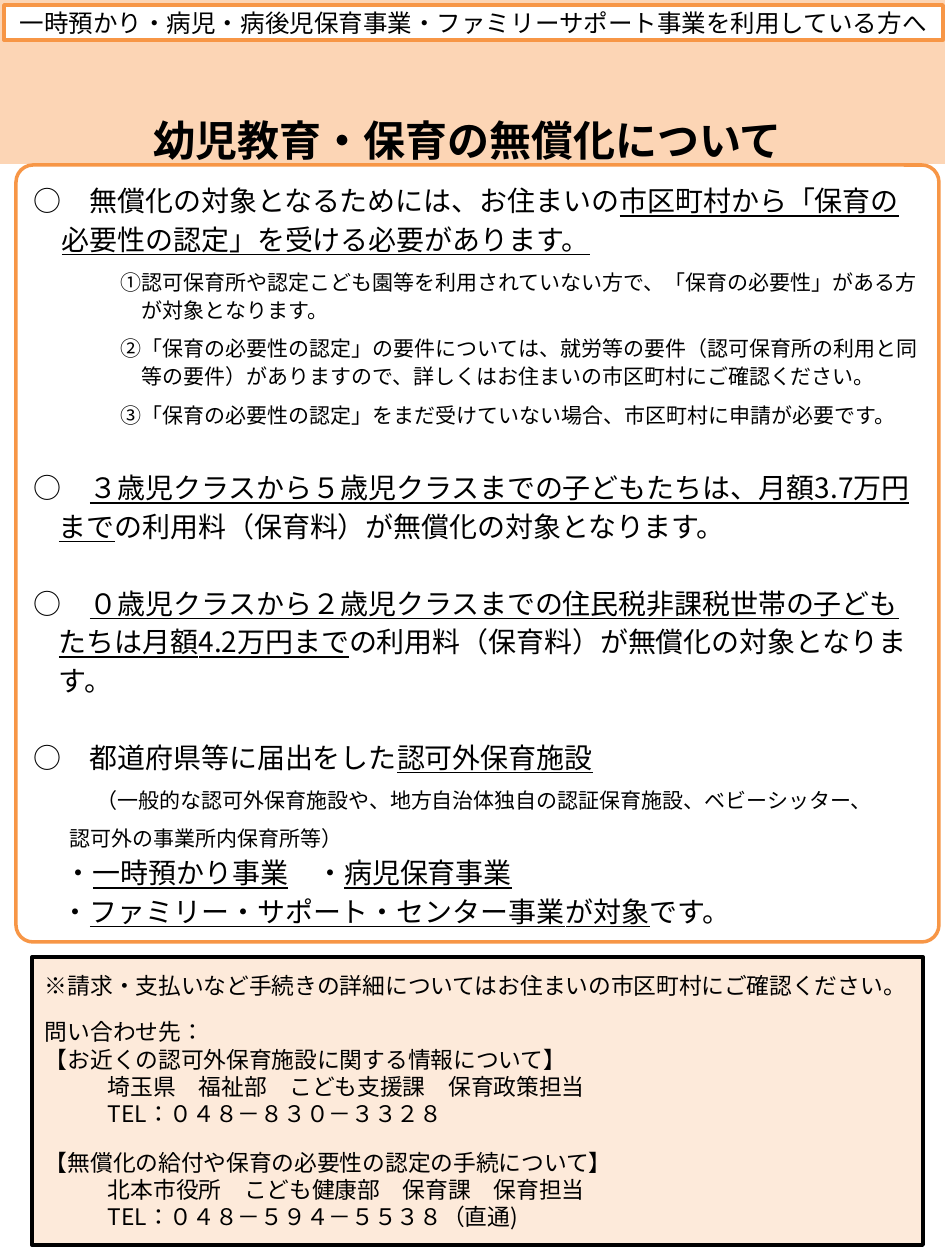
from lxml import etree
from pptx import Presentation
from pptx.dml.color import RGBColor
from pptx.enum.lang import MSO_LANGUAGE_ID
from pptx.enum.shapes import MSO_SHAPE
from pptx.enum.text import MSO_ANCHOR, MSO_AUTO_SIZE, PP_ALIGN
from pptx.oxml.ns import qn
from pptx.util import Emu, Pt

PX = 914400 // 126
FONT = "Noto Sans CJK JP"
BLACK = RGBColor(0x00, 0x00, 0x00)
WHITE = RGBColor(0xFF, 0xFF, 0xFF)
ORANGE = RGBColor(0xF7, 0x96, 0x46)
PEACH = RGBColor(0xFC, 0xD5, 0xB5)
PALE_PEACH = RGBColor(0xFD, 0xEA, 0xDA)
RECT, ROUNDED = MSO_SHAPE.RECTANGLE, MSO_SHAPE.ROUNDED_RECTANGLE
LEFT, CENTER = PP_ALIGN.LEFT, PP_ALIGN.CENTER
MIDDLE, BOTTOM = MSO_ANCHOR.MIDDLE, MSO_ANCHOR.BOTTOM
NO_AUTOFIT = MSO_AUTO_SIZE.NONE
JAPANESE = MSO_LANGUAGE_ID.JAPANESE

# Indents in px (margin, first line), sizes and spacing in points
ITEM = dict(size=16, margin=25, indent=-25, line=22)
NOTE = dict(size=12, margin=108, indent=-21, line=16, before=6, level=1)
CONTACT = dict(size=13, line=15.6)
DETAIL = dict(CONTACT, margin=63, level=1)

# Text between underscores is underlined
REQUIREMENTS = [
    ("○　無償化の対象となるためには、お住まいの_市区町村から「保育の_", ITEM),
    ("_必要性の認定」を受ける必要があります。_", dict(ITEM, margin=28, indent=0)),
    ("①認可保育所や認定こども園等を利用されていない方で、「保育の必要性」がある方が対象となります。", NOTE),
    ("②「保育の必要性の認定」の要件については、就労等の要件（認可保育所の利用と同等の要件）が"
     "ありますので、詳しくはお住まいの市区町村にご確認ください。", NOTE),
    ("③「保育の必要性の認定」をまだ受けていない場合、市区町村に申請が必要です。", NOTE),
    ("○　_３歳児クラスから５歳児クラスまでの子どもたちは、月額3.7万円まで_"
     "の利用料（保育料）が無償化の対象となります。", dict(ITEM, before=22)),
    ("○　_０歳児クラスから２歳児クラスまでの住民税非課税世帯の子どもたちは月額4.2万円まで_"
     "の利用料（保育料）が無償化の対象となります。", dict(ITEM, before=22)),
    ("○　都道府県等に届出をした_認可外保育施設_", dict(ITEM, before=22)),
    ("（一般的な認可外保育施設や、地方自治体独自の認証保育施設、ベビーシッター、",
     dict(ITEM, size=12, margin=63, indent=0)),
    ("認可外の事業所内保育所等）", dict(ITEM, size=12, margin=36, indent=0)),
    ("・_一時預かり事業_　・_病児保育事業_", dict(ITEM, margin=31, indent=0)),
    ("・_ファミリー・サポート・センター事業_\t_が対象_です。",
     dict(ITEM, margin=28, indent=0, tab=586)),
]
CONTACTS = [
    ("※請求・支払いなど手続きの詳細についてはお住まいの市区町村にご確認ください。", CONTACT),
    ("問い合わせ先：", dict(CONTACT, before=11)),
    ("【お近くの認可外保育施設に関する情報について】", CONTACT),
    ("埼玉県　福祉部　こども支援課　保育政策担当", DETAIL),
    ("TEL：０４８－８３０－３３２８", DETAIL),
    ("【無償化の給付や保育の必要性の認定の手続について】", dict(CONTACT, before=12)),
    ("北本市役所　こども健康部　保育課　保育担当", DETAIL),
    ("TEL：０４８－５９４－５５３８（直通)", DETAIL),
]


def apply(target, values):
    for name, value in values.items():
        setattr(target, name, value)


def place(shape, left, top, width, height):
    apply(shape, dict(left=Emu(left * PX), top=Emu(top * PX),
                      width=Emu(width * PX), height=Emu(height * PX)))


def add_panel(slide, kind, box, fill, line=None, weight=2):
    panel = slide.shapes.add_shape(kind, *(Emu(v * PX) for v in box))
    panel.shadow.inherit = False
    panel.fill.solid()
    panel.fill.fore_color.rgb = fill
    if line is None:
        panel.line.fill.background()
    else:
        panel.line.color.rgb = line
        panel.line.width = Pt(weight)
    return panel


def send_to_back(shape):
    shape.element.getparent().insert(2, shape.element)


def format_paragraph(paragraph, align, line=None, before=0, margin=0, indent=0, level=0, tab=None):
    properties = paragraph._p.get_or_add_pPr()
    properties.set("marL", str(margin * PX))
    properties.set("indent", str(indent * PX))
    etree.SubElement(properties, qn("a:buNone"))
    if tab:
        stops = etree.SubElement(properties, qn("a:tabLst"))
        etree.SubElement(stops, qn("a:tab"), pos=str(tab * PX), algn="l")
    apply(paragraph, dict(alignment=align, level=level, space_before=Pt(before),
                          line_spacing=Pt(line) if line else 1.0))


def add_runs(paragraph, text, size, bold):
    for position, part in enumerate(text.split("_")):
        if part:
            run = paragraph.add_run()
            run.text = part
            apply(run.font, dict(size=Pt(size), name=FONT, bold=bold,
                                 underline=position % 2 == 1, language_id=JAPANESE))
            run.font.color.rgb = BLACK
            etree.SubElement(run.font._element, qn("a:ea"), typeface=FONT)


def write(shape, content, align=LEFT, anchor=MIDDLE, side=0, bold=False):
    """Fill a shape with (text, format) paragraphs; side is the inset in px."""
    frame = shape.text_frame
    apply(frame, dict(word_wrap=True, auto_size=NO_AUTOFIT, vertical_anchor=anchor,
                      margin_left=Emu(side * PX), margin_right=Emu(side * PX),
                      margin_top=0, margin_bottom=0))
    for number, (text, layout) in enumerate(content):
        paragraph = frame.add_paragraph() if number else frame.paragraphs[0]
        layout = dict(layout)
        size = layout.pop("size")
        format_paragraph(paragraph, align, **layout)
        add_runs(paragraph, text, size, bold)


def main():
    deck = Presentation()
    deck.slide_width, deck.slide_height = Emu(945 * PX), Emu(1260 * PX)
    slide = deck.slides.add_slide(deck.slide_layouts[1])
    title, requirements = slide.placeholders

    frame = add_panel(slide, ROUNDED, (16, 165, 923, 777), WHITE, ORANGE)
    frame.adjustments[0] = 0.022
    send_to_back(frame)
    send_to_back(add_panel(slide, RECT, (0, -1, 945, 165), PEACH))

    place(title, 0, 50, 935, 115)
    write(title, [("幼児教育・保育の無償化について", dict(size=24))], CENTER, BOTTOM, bold=True)
    place(requirements, 34, 165, 887, 777)
    write(requirements, REQUIREMENTS)

    audience = add_panel(slide, RECT, (4, 5, 939, 35), WHITE, ORANGE)
    write(audience, [("一時預かり・病児・病後児保育事業・ファミリーサポート事業を利用している方へ",
                      dict(size=14))], CENTER)
    contacts = add_panel(slide, RECT, (32, 957, 891, 288), PALE_PEACH, BLACK, 2.25)
    write(contacts, CONTACTS, side=13)

    deck.save("out.pptx")


if __name__ == "__main__":
    main()
